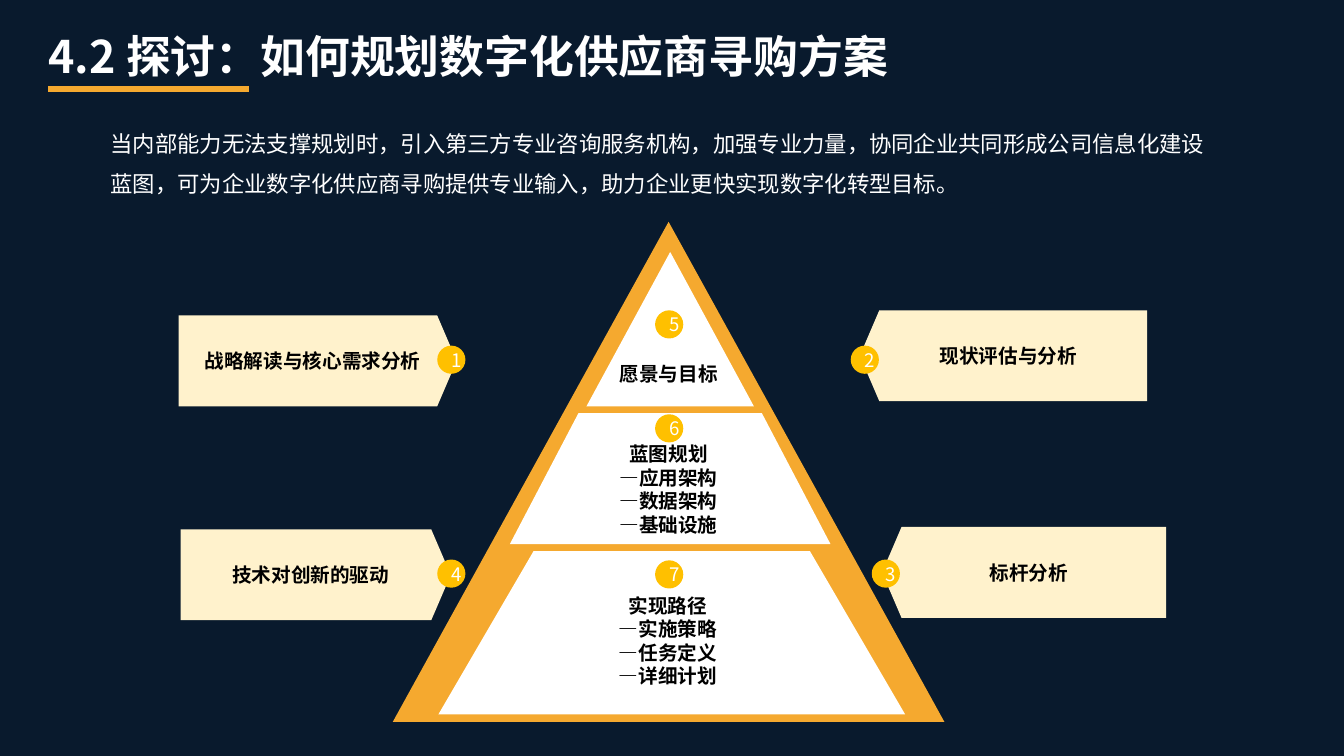
from lxml import etree
from pptx import Presentation
from pptx.dml.color import RGBColor
from pptx.enum.shapes import MSO_CONNECTOR, MSO_SHAPE
from pptx.enum.text import MSO_ANCHOR, PP_ALIGN
from pptx.oxml.ns import qn
from pptx.util import Cm, Pt

NAVY = RGBColor(0x09, 0x1A, 0x2D)
ORANGE = RGBColor(0xF5, 0xA9, 0x2F)
CREAM = RGBColor(0xFF, 0xF2, 0xCC)
AMBER = RGBColor(0xFF, 0xC0, 0x00)
WHITE = RGBColor(0xFF, 0xFF, 0xFF)
BLACK = RGBColor(0, 0, 0)
FONT = "Noto Sans CJK SC"

TITLE = "4.2 探讨：如何规划数字化供应商寻购方案"
INTRO = ("当内部能力无法支撑规划时，引入第三方专业咨询服务机构，加强专业力量，"
         "协同企业共同形成公司信息化建设蓝图，可为企业数字化供应商寻购提供专业输入，"
         "助力企业更快实现数字化转型目标。")

PYRAMID = [
    (MSO_SHAPE.ISOSCELES_TRIANGLE, 9.9, 5.59, 13.9, 12.6, None, ORANGE),
    (MSO_SHAPE.TRAPEZOID, 11.05, 13.89, 11.76, 4.11, 0.583, WHITE),
    (MSO_SHAPE.TRAPEZOID, 12.85, 10.41, 8.08, 3.3, 0.524, WHITE),
    (MSO_SHAPE.ISOSCELES_TRIANGLE, 14.78, 6.35, 4.22, 3.89, None, WHITE),
]
TAGS = [
    ("战略解读与核心需求分析", 4.5, 7.95, 7.01, False),
    ("现状评估与分析", 21.67, 7.82, 7.24, True),
    ("技术对创新的驱动", 4.55, 13.34, 6.81, False),
    ("标杆分析", 22.23, 13.28, 7.16, True),
]
BADGES = [
    ("1", 11.02, 8.71), ("2", 21.44, 8.71), ("4", 11.02, 14.1), ("3", 21.97, 14.1),
    ("5", 16.51, 7.82), ("6", 16.51, 10.44), ("7", 16.51, 14.12),
]
LEVELS = [
    (["愿景与目标"], 15.32, 8.99, 3.07),
    (["蓝图规划", "—应用架构", "—数据架构", "—基础设施"], 14.68, 11.02, 4.34),
    (["实现路径", "—实施策略", "—任务定义", "—详细计划"], 14.83, 14.83, 4.01),
]
TAG_HEIGHT = 2.29
BADGE_SIZE = 0.71
LINE_HEIGHT = 0.6

prs = Presentation()
prs.slide_width, prs.slide_height = Cm(33.87), Cm(19.05)
slide = prs.slides.add_slide(prs.slide_layouts[6])
slide.background.fill.solid()
slide.background.fill.fore_color.rgb = NAVY


def write(s, lines, size, color, bold=False, align=PP_ALIGN.CENTER,
          anchor=MSO_ANCHOR.MIDDLE, spacing=None):
    tf = s.text_frame
    tf.word_wrap = True
    tf.vertical_anchor = anchor
    for i, line in enumerate(lines):
        p = tf.add_paragraph() if i else tf.paragraphs[0]
        p.alignment = align
        p.line_spacing = spacing
        r = p.add_run()
        r.text = line
        for name, value in {"name": FONT, "size": Pt(size), "bold": bold}.items():
            setattr(r.font, name, value)
        r.font.color.rgb = color
        etree.SubElement(r.font._element, qn("a:ea")).set("typeface", FONT)


def add_shape(kind, x, y, w, h, color, adj=None):
    s = slide.shapes.add_shape(kind, Cm(x), Cm(y), Cm(w), Cm(h))
    s.shadow.inherit = False
    s.fill.solid()
    s.fill.fore_color.rgb = color
    s.line.fill.background()
    if adj is not None:
        s.adjustments[0] = adj
    return s


def add_text(x, y, w, h, *args, **formats):
    s = slide.shapes.add_textbox(Cm(x), Cm(y), Cm(w), Cm(h))
    write(s, *args, **formats)


rule = slide.shapes.add_connector(MSO_CONNECTOR.STRAIGHT, Cm(1.22), Cm(2.24), Cm(6.27), Cm(2.24))
rule.line.color.rgb = ORANGE
rule.line.width = Pt(4.5)
etree.SubElement(rule._element.spPr, qn("a:effectLst"))

add_text(0.97, 0.69, 30, 1.52, [TITLE], 32, WHITE, bold=True,
         align=PP_ALIGN.LEFT, anchor=MSO_ANCHOR.BOTTOM, spacing=0.9)

for kind, x, y, w, h, adj, color in PYRAMID:
    add_shape(kind, x, y, w, h, color, adj)

for label, x, y, w, flipped in TAGS:
    s = add_shape(MSO_SHAPE.PENTAGON, x, y, w, TAG_HEIGHT, CREAM, 0.214)
    if flipped:
        s._element.spPr.find(qn("a:xfrm")).set("flipH", "1")
    write(s, [label], 14, BLACK, bold=True)

for number, x, y in BADGES:
    s = add_shape(MSO_SHAPE.OVAL, x, y, BADGE_SIZE, BADGE_SIZE, AMBER)
    write(s, [number], 13.3, WHITE)

for lines, x, y, w in LEVELS:
    add_text(x, y, w, len(lines) * LINE_HEIGHT + 0.25, lines, 14, BLACK,
             bold=True, anchor=MSO_ANCHOR.TOP)

add_text(2.54, 2.82, 28.12, 2.31, [INTRO], 16, WHITE,
         align=PP_ALIGN.LEFT, anchor=MSO_ANCHOR.TOP, spacing=1.5)

prs.save("out.pptx")
